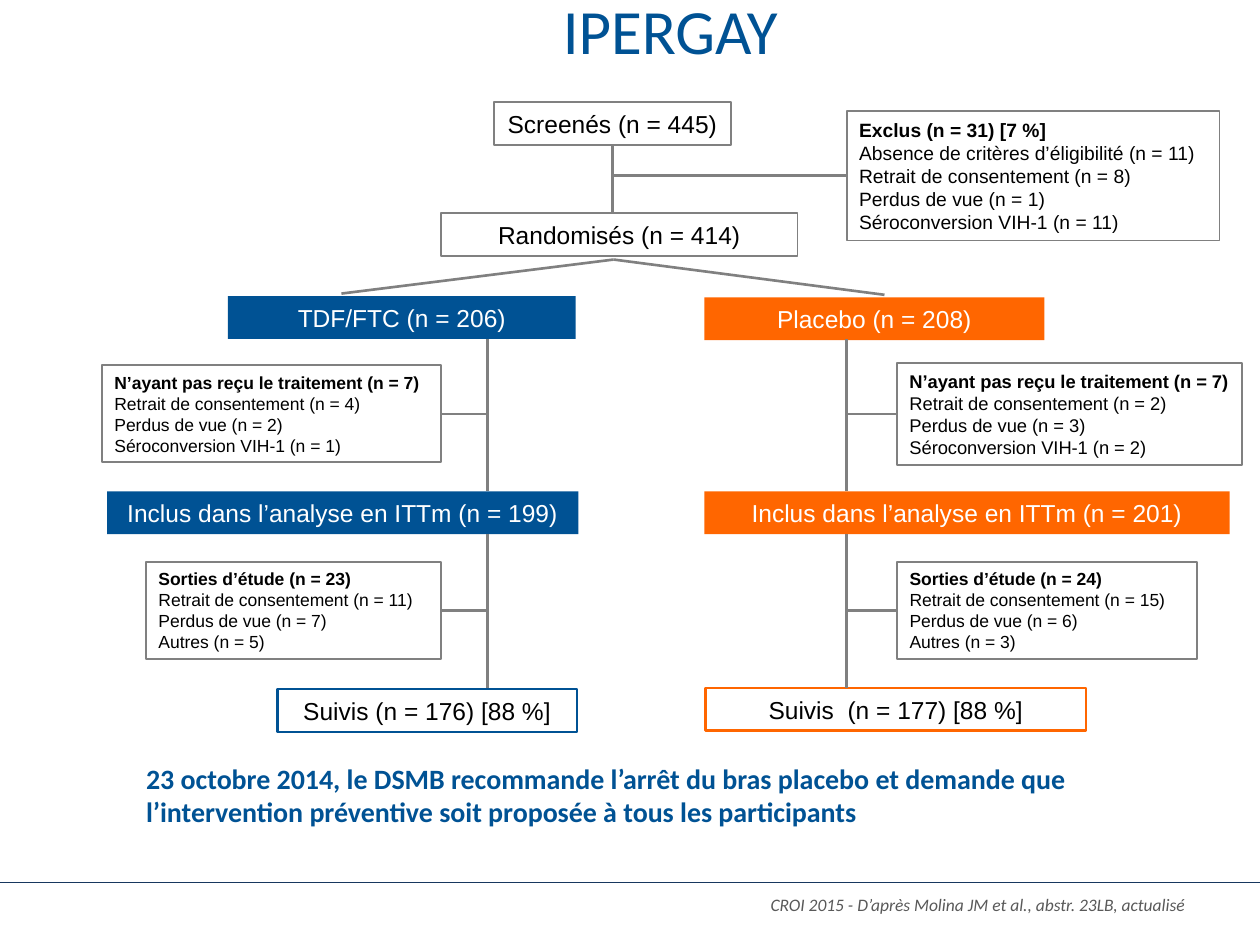
from pptx import Presentation
from pptx.dml.color import RGBColor
from pptx.enum.shapes import MSO_CONNECTOR, MSO_SHAPE
from pptx.enum.text import MSO_ANCHOR, MSO_AUTO_SIZE, PP_ALIGN
from pptx.oxml.ns import qn
from pptx.util import Inches, Pt
from lxml import etree

RECT, STRAIGHT = MSO_SHAPE.RECTANGLE, MSO_CONNECTOR.STRAIGHT
LEFT, CENTER, RIGHT = PP_ALIGN.LEFT, PP_ALIGN.CENTER, PP_ALIGN.RIGHT
MIDDLE, GROW = MSO_ANCHOR.MIDDLE, MSO_AUTO_SIZE.SHAPE_TO_FIT_TEXT

THEME = {
    "blue": RGBColor.from_string("005294"),
    "orange": RGBColor.from_string("FF6600"),
    "grey": RGBColor.from_string("808080"),
    "footer": RGBColor.from_string("595959"),
    "rule": RGBColor.from_string("17375E"),
    "white": RGBColor.from_string("FFFFFF"),
    "black": RGBColor.from_string("000000"),
    "title_size": 36, "message_size": 16, "step_size": 14, "exclusion_size": 11,
    "right_note_size": 10.5, "note_size": 10, "footer_size": 10,
    "heading_font": "Calibri", "box_font": "Arial",
}

prs = Presentation()
prs.slide_width, prs.slide_height = Inches(10), Inches(7.5)
s = prs.slides.add_slide(prs.slide_layouts[5])


def write(tf, lines, size, color, font, align=LEFT, bold_first=False):
    for i, line in enumerate(lines):
        p = tf.paragraphs[0] if i == 0 else tf.add_paragraph()
        p.alignment = align
        r = p.add_run()
        r.text = line
        r.font.name, r.font.size = font, Pt(size)
        r.font.color.rgb = THEME[color]
        r.font.bold = bold_first and i == 0


def connect(x1, y1, x2, y2, color="grey", width=1.5):
    c = s.shapes.add_connector(STRAIGHT, Inches(x1), Inches(y1), Inches(x2), Inches(y2))
    c.line.color.rgb, c.line.width = THEME[color], Pt(width)
    etree.SubElement(c._element.spPr, qn("a:effectLst"))
    return c


connect(0, 7, 10, 7, "rule", 0.25)

title = s.shapes.title
title.left, title.top, title.width, title.height = map(Inches, (1.14, 0.16, 8.36, 0.44))
tf = title.text_frame
tf.margin_left = tf.margin_right = tf.margin_top = tf.margin_bottom = 0
tf.vertical_anchor = MIDDLE
write(tf, ["IPERGAY"], THEME["title_size"], "blue", THEME["heading_font"], CENTER)
tf.paragraphs[0].line_spacing = Pt(22)

steps = [
    ("Screenés (n = 445)", 3.92, 0.81, 1.88, "white", "grey", 1),
    ("Randomisés (n = 414)", 3.5, 1.69, 2.83, "white", "grey", 1),
    ("TDF/FTC (n = 206)", 1.81, 2.35, 2.76, "blue", None, 0),
    ("Placebo (n = 208)", 5.59, 2.36, 2.7, "orange", None, 0),
    ("Inclus dans l’analyse en ITTm (n = 199)", 0.85, 3.9, 3.74, "blue", None, 0),
    ("Inclus dans l’analyse en ITTm (n = 201)", 5.59, 3.9, 4.17, "orange", None, 0),
    ("Suivis (n = 176) [88 %]", 2.2, 5.47, 2.38, "white", "blue", 1.5),
    ("Suivis  (n = 177) [88 %]", 5.6, 5.46, 3.02, "white", "orange", 1.5),
]
boxes = []
for text, x, y, w, fill, line, width in steps:
    sp = s.shapes.add_shape(RECT, Inches(x), Inches(y), Inches(w), Inches(0.34))
    sp.shadow.inherit = False
    sp.fill.solid()
    sp.fill.fore_color.rgb = THEME[fill]
    if line:
        sp.line.color.rgb, sp.line.width = THEME[line], Pt(width)
    else:
        sp.line.fill.background()
    tf = sp.text_frame
    tf.word_wrap, tf.auto_size = text != steps[0][0], GROW
    color = "black" if fill == "white" else "white"
    write(tf, [text], THEME["step_size"], color, THEME["box_font"], CENTER)
    boxes.append(sp)

connect(4.86, 1.15, 4.86, 1.69).begin_connect(boxes[0], 2)
for x, y in ((2.71, 2.33), (7.02, 2.34)):
    connect(4.87, 2.06, x, y)
for trunk_x in (3.87, 6.72):
    for top, bottom in ((2.69, 3.9), (4.24, 5.46)):
        connect(trunk_x, top, trunk_x, bottom)

notes = [
    (6.72, 0.88, 2.96, 1.03, "exclusion_size", 1, 4.86,
     ["Exclus (n = 31) [7 %]", "Absence de critères d’éligibilité (n = 11)",
      "Retrait de consentement (n = 8)", "Perdus de vue (n = 1)",
      "Séroconversion VIH-1 (n = 11)"]),
    (0.81, 2.9, 2.69, 0.77, "note_size", 3, 3.87,
     ["N’ayant pas reçu le traitement (n = 7)", "Retrait de consentement (n = 4)",
      "Perdus de vue (n = 2)", "Séroconversion VIH-1 (n = 1)"]),
    (7.12, 2.88, 2.74, 0.81, "right_note_size", 1, 6.72,
     ["N’ayant pas reçu le traitement (n = 7)", "Retrait de consentement (n = 2)",
      "Perdus de vue (n = 3)", "Séroconversion VIH-1 (n = 2)"]),
    (1.16, 4.46, 2.34, 0.77, "note_size", 3, 3.87,
     ["Sorties d’étude (n = 23)", "Retrait de consentement (n = 11)",
      "Perdus de vue (n = 7)", "Autres (n = 5)"]),
    (7.12, 4.46, 2.38, 0.77, "note_size", 1, 6.72,
     ["Sorties d’étude (n = 24)", "Retrait de consentement (n = 15)",
      "Perdus de vue (n = 6)", "Autres (n = 3)"]),
]
for x, y, w, h, size, side, trunk_x, lines in notes:
    sp = s.shapes.add_shape(RECT, Inches(x), Inches(y), Inches(w), Inches(h))
    sp.shadow.inherit = False
    sp.fill.solid()
    sp.fill.fore_color.rgb = THEME["white"]
    sp.line.color.rgb, sp.line.width = THEME["grey"], Pt(1)
    tf = sp.text_frame
    tf.word_wrap, tf.auto_size = True, GROW
    write(tf, lines, THEME[size], "black", THEME["box_font"], bold_first=True)
    middle = y + h / 2
    connect(x, middle, trunk_x, middle).begin_connect(sp, side)

message = s.shapes.add_textbox(Inches(1.16), Inches(6.04), Inches(8.34), Inches(0.58))
tf = message.text_frame
tf.word_wrap = True
tf.margin_left = tf.margin_right = tf.margin_top = tf.margin_bottom = 0
write(tf, ["23 octobre 2014, le DSMB recommande l’arrêt du bras placebo et demande que "
           "l’intervention préventive soit proposée à tous les participants"],
      THEME["message_size"], "blue", THEME["heading_font"], bold_first=True)

source = s.shapes.add_textbox(Inches(3.03), Inches(7), Inches(6.47), Inches(0.36))
tf = source.text_frame
tf.word_wrap, tf.vertical_anchor = True, MIDDLE
write(tf, ["CROI 2015 - D’après Molina JM et al., abstr. 23LB, actualisé"],
      THEME["footer_size"], "footer", THEME["heading_font"], RIGHT)
tf.paragraphs[0].runs[0].font.italic = True

prs.save("out.pptx")
